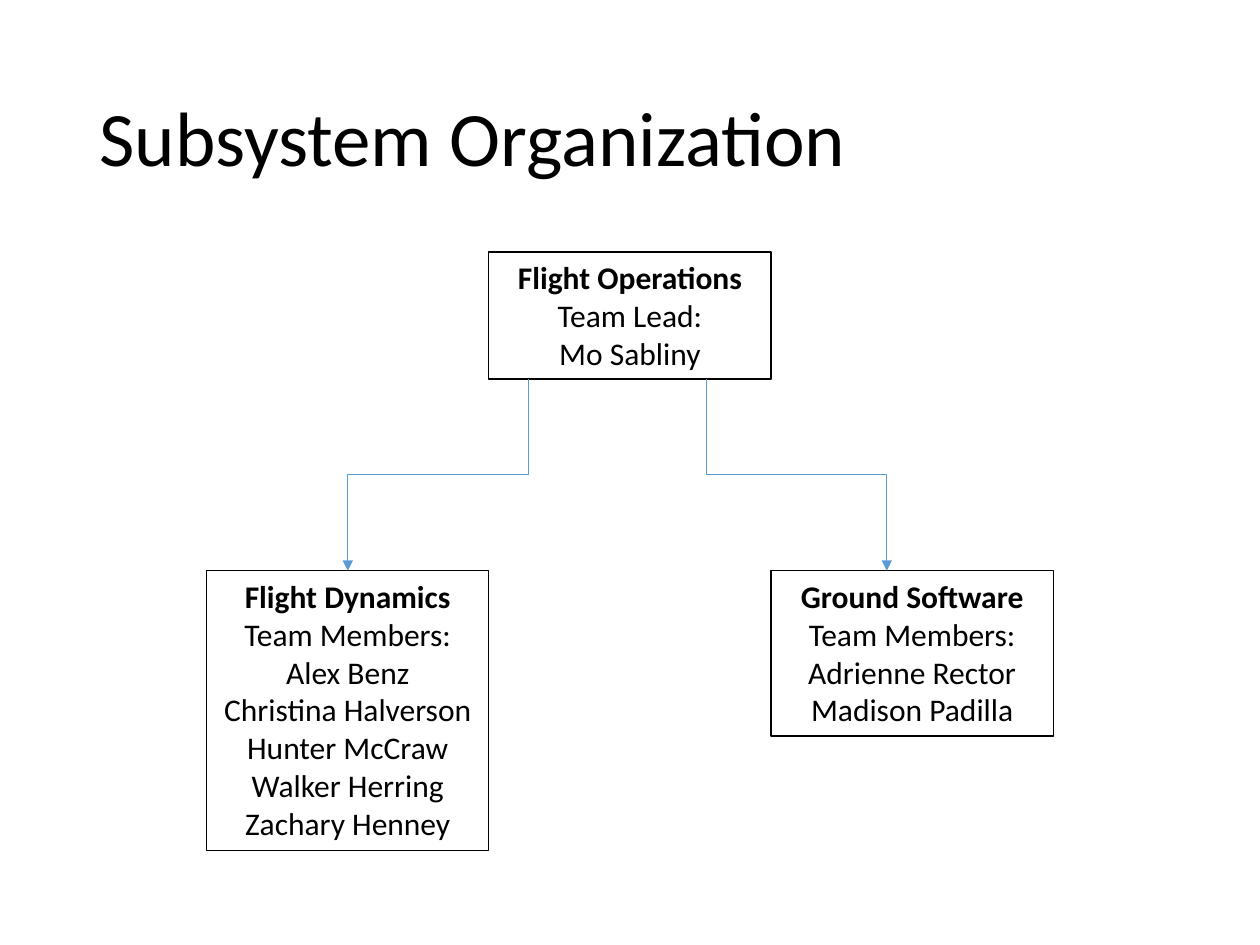
from lxml.etree import SubElement
from pptx import Presentation
from pptx.dml.color import RGBColor
from pptx.enum.shapes import MSO_CONNECTOR, MSO_SHAPE
from pptx.enum.text import MSO_ANCHOR, MSO_AUTO_SIZE, PP_ALIGN
from pptx.oxml.ns import qn
from pptx.util import Inches, Pt

COLORS = {"ink": "000000", "arrow": "5B9BD5"}
LEFT, COL = 1.64, 2.24
LINE, PADDING = 0.303, 0.1
LEAD_TOP, TEAM_TOP = 2, 4.53


class OrgChart:
    """Style and slide of an organization chart laid out in equal columns."""

    def __init__(self, slide, font="Calibri"):
        self.slide = slide
        self.font = font

    def color(self, name):
        return RGBColor.from_string(COLORS[name])

    def x(self, col):
        return LEFT + col * COL

    def run(self, p, text, size, bold=False):
        r = p.add_run()
        r.text = text
        r.font.name = self.font
        r.font.size = Pt(size)
        r.font.bold = bold
        r.font.color.rgb = self.color("ink")

    def title(self, text, left, top, width, height):
        sp = self.slide.shapes.add_textbox(*map(Inches, (left, top, width, height)))
        tf = sp.text_frame
        tf.word_wrap = True
        tf.vertical_anchor = MSO_ANCHOR.MIDDLE
        p = tf.paragraphs[0]
        p.line_spacing = 0.9
        self.run(p, text, 44)

    def box(self, col, top, lines):
        height = PADDING + LINE * len(lines)
        sp = self.slide.shapes.add_shape(
            MSO_SHAPE.RECTANGLE, *map(Inches, (self.x(col), top, COL, height)))
        sp.shadow.inherit = False
        sp.fill.background()
        sp.line.color.rgb = self.color("ink")
        sp.line.width = Pt(0.75)
        tf = sp.text_frame
        tf.word_wrap = True
        tf.auto_size = MSO_AUTO_SIZE.SHAPE_TO_FIT_TEXT
        tf.vertical_anchor = MSO_ANCHOR.TOP
        for i, text in enumerate(lines):
            p = tf.paragraphs[0] if i == 0 else tf.add_paragraph()
            p.alignment = PP_ALIGN.CENTER
            self.run(p, text, 18, bold=i == 0)
        return top + height

    def arrow(self, from_col, top, to_col, bottom):
        """Draw an elbow that leaves and arrives vertically, as a turned connector."""
        x1, x2 = self.x(from_col), self.x(to_col)
        cx, cy = (x1 + x2) / 2, (top + bottom) / 2
        half_w, half_h = (bottom - top) / 2, abs(x2 - x1) / 2
        side = 1 if x2 < x1 else -1
        ends = (cx - side * half_w, cy - half_h, cx + side * half_w, cy + half_h)
        cxn = self.slide.shapes.add_connector(MSO_CONNECTOR.ELBOW, *map(Inches, ends))
        cxn.line.color.rgb = self.color("arrow")
        cxn.line.width = Pt(0.5)
        sp_pr = cxn._element.spPr
        sp_pr.find(qn("a:xfrm")).set("rot", str((90 if side == 1 else 270) * 60000))
        SubElement(sp_pr.find(qn("a:ln")), qn("a:tailEnd"), type="triangle")
        SubElement(sp_pr, qn("a:effectLst"))


def main():
    prs = Presentation()
    prs.slide_width, prs.slide_height = Inches(10), Inches(7.5)
    chart = OrgChart(prs.slides.add_slide(prs.slide_layouts[6]))
    chart.title("Subsystem Organization", 0.69, 0.4, 8.62, 1.45)
    lead_bottom = chart.box(1, LEAD_TOP, ["Flight Operations", "Team Lead:", "Mo Sabliny"])
    teams = [
        (0, 1.14, 0.5, ["Flight Dynamics", "Team Members:", "Alex Benz",
                        "Christina Halverson", "Hunter McCraw", "Walker Herring",
                        "Zachary Henney"]),
        (2, 1.77, 2.41, ["Ground Software", "Team Members:", "Adrienne Rector",
                         "Madison Padilla"]),
    ]
    for col, from_col, to_col, lines in teams:
        chart.box(col, TEAM_TOP, lines)
        chart.arrow(from_col, lead_bottom, to_col, TEAM_TOP)
    prs.save("out.pptx")


if __name__ == "__main__":
    main()
